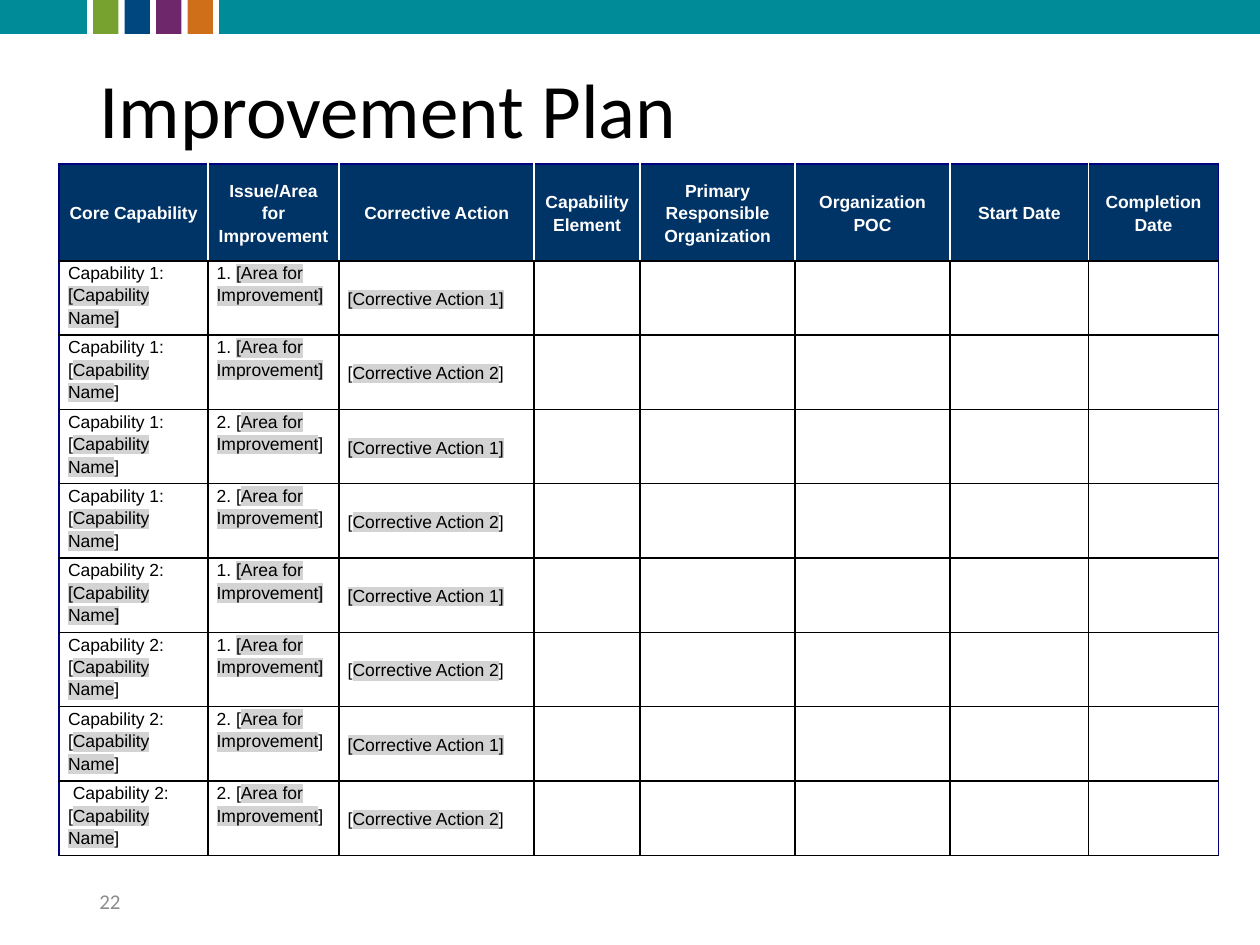
from lxml.etree import SubElement
from pptx import Presentation
from pptx.dml.color import RGBColor
from pptx.enum.shapes import MSO_SHAPE
from pptx.enum.text import MSO_ANCHOR, PP_ALIGN
from pptx.oxml.ns import qn
from pptx.util import Inches, Pt

TEAL = RGBColor(0x00, 0x8B, 0x99)
GREEN = RGBColor(0x78, 0xA2, 0x2F)
BLUE = RGBColor(0x00, 0x46, 0x7F)
PURPLE = RGBColor(0x6D, 0x27, 0x6A)
ORANGE = RGBColor(0xD0, 0x6F, 0x1A)
HEADER_BLUE = RGBColor(0x00, 0x33, 0x66)
FRAME_NAVY = RGBColor(0x00, 0x00, 0x80)
MARK_GRAY = RGBColor(0xD3, 0xD3, 0xD3)
NUMBER_GRAY = RGBColor(0x8C, 0x8C, 0x8C)
WHITE = RGBColor(0xFF, 0xFF, 0xFF)
BLACK = RGBColor(0x00, 0x00, 0x00)

SLIDE_WIDTH, SLIDE_HEIGHT = 10, 7.5
TEXT_LEFT = 0.69

# Top band: a teal start, four tabs at an even pitch, a teal rest
BAND_HEIGHT = 0.27
TAB_WIDTH, TAB_GAP = 0.2, 0.05
TAB_COLORS = (GREEN, BLUE, PURPLE, ORANGE)

# Table grid
TABLE_LEFT, TABLE_TOP = 0.47, 1.3
COLUMN_WIDTHS = (1.18, 1.04, 1.55, 0.84, 1.23, 1.23, 1.1, 1.03)
HEADER_HEIGHT, ROW_HEIGHT = 0.77, 0.59
BODY_ROWS = 8
HEADERS = (
    "Core Capability", "Issue/Area for Improvement", "Corrective Action",
    "Capability Element", "Primary Responsible Organization",
    "Organization POC", "Start Date", "Completion Date",
)


def add_span(para, text, size, font, color, bold=False, marked=False):
    """Add one run; a marked run gets a gray highlight."""
    span = para.add_run()
    span.text = text
    span.font.size = Pt(size)
    span.font.bold = bold
    span.font.color.rgb = color
    span.font.name = font
    if marked:
        properties = span.font._element
        highlight = SubElement(properties, qn("a:highlight"))
        SubElement(highlight, qn("a:srgbClr"), val=str(MARK_GRAY))
        properties.find(qn("a:solidFill")).addnext(highlight)


def add_block(page, left, width, color):
    block = page.shapes.add_shape(
        MSO_SHAPE.RECTANGLE, Inches(left), 0, Inches(width), Inches(BAND_HEIGHT))
    block.shadow.inherit = False
    block.fill.solid()
    block.fill.fore_color.rgb = color
    block.line.fill.background()


def add_band(page):
    add_block(page, 0, TEXT_LEFT, TEAL)
    left = TEXT_LEFT + TAB_GAP
    for color in TAB_COLORS:
        add_block(page, left, TAB_WIDTH, color)
        left += TAB_WIDTH + TAB_GAP
    add_block(page, left, SLIDE_WIDTH - left, TEAL)


def add_label(page, top, width, height, text, size, color, line_spacing=1.0):
    box = page.shapes.add_textbox(
        Inches(TEXT_LEFT), Inches(top), Inches(width), Inches(height))
    frame = box.text_frame
    frame.word_wrap = True
    frame.vertical_anchor = MSO_ANCHOR.MIDDLE
    para = frame.paragraphs[0]
    para.line_spacing = line_spacing
    add_span(para, text, size, "Calibri", color)


def set_borders(cell, left, right, top, bottom):
    properties = cell._tc.get_or_add_tcPr()
    sides = {"a:lnL": left, "a:lnR": right, "a:lnT": top, "a:lnB": bottom}
    for position, (tag, color) in enumerate(sides.items()):
        line = SubElement(properties, qn(tag), w=str(Pt(1)))
        fill = SubElement(line, qn("a:solidFill"))
        SubElement(fill, qn("a:srgbClr"), val=str(color))
        properties.insert(position, line)


def style_cell(cell, row, column):
    """Navy outer frame, white lines in the header, black lines in the body."""
    inner = BLACK if row else WHITE
    last = len(COLUMN_WIDTHS) - 1
    set_borders(
        cell,
        left=FRAME_NAVY if column == 0 else inner,
        right=FRAME_NAVY if column == last else inner,
        top=BLACK if row else FRAME_NAVY,
        bottom=BLACK)
    if row:
        cell.fill.background()
    else:
        cell.fill.solid()
        cell.fill.fore_color.rgb = HEADER_BLUE


def fill_cell(cell, spans, color=BLACK, bold=False, centered=False, middle=False):
    """Write (text, marked) pairs into a cell."""
    cell.margin_left = cell.margin_right = Inches(0.07)
    cell.margin_top = cell.margin_bottom = 0
    cell.vertical_anchor = MSO_ANCHOR.MIDDLE if middle else MSO_ANCHOR.TOP
    para = cell.text_frame.paragraphs[0]
    para.alignment = PP_ALIGN.CENTER if centered else PP_ALIGN.LEFT
    para.line_spacing = 1.15
    para.space_before = para.space_after = Pt(2)
    for text, marked in spans:
        add_span(para, text, 10, "Arial", color, bold, marked)


def field_spans(lead, name, brackets_marked):
    """A lead text and a bracketed field, with the brackets marked or plain."""
    if brackets_marked:
        spans = [(lead, False), (f"[{name}]", True)]
    else:
        spans = [(lead + "[", False), (name, True), ("]", False)]
    return [span for span in spans if span[0]]


def body_fields(index):
    """Two capabilities, two areas in each, two actions in each area."""
    capability, area, action = index // 4 + 1, index // 2 % 2 + 1, index % 2 + 1
    lead = f"Capability {capability}: "
    if index == BODY_ROWS - 1:
        lead = " " + lead
    return (
        field_spans(lead, "Capability Name", index % 4 == 0),
        field_spans(f"{area}. ", "Area for Improvement", area == 1),
        field_spans("", f"Corrective Action {action}", action == 1),
    )


def add_plan_table(page):
    table = page.shapes.add_table(
        BODY_ROWS + 1, len(COLUMN_WIDTHS), Inches(TABLE_LEFT), Inches(TABLE_TOP),
        Inches(sum(COLUMN_WIDTHS)),
        Inches(HEADER_HEIGHT + BODY_ROWS * ROW_HEIGHT)).table
    table.first_row = table.horz_banding = False
    for column, width in zip(table.columns, COLUMN_WIDTHS):
        column.width = Inches(width)
    for number, row in enumerate(table.rows):
        row.height = Inches(ROW_HEIGHT if number else HEADER_HEIGHT)
        for column, cell in enumerate(row.cells):
            style_cell(cell, number, column)

    # Header row
    for column, header in enumerate(HEADERS):
        fill_cell(table.cell(0, column), [(header, False)],
                  WHITE, bold=True, centered=True, middle=True)

    # Body rows: the first three columns hold fields
    for index in range(BODY_ROWS):
        for column, spans in enumerate(body_fields(index)):
            fill_cell(table.cell(index + 1, column), spans, middle=column == 2)


def main():
    deck = Presentation()
    deck.slide_width, deck.slide_height = Inches(SLIDE_WIDTH), Inches(SLIDE_HEIGHT)
    page = deck.slides.add_slide(deck.slide_layouts[6])
    add_band(page)
    add_label(page, 0.4, 8.62, 1, "Improvement Plan", 44, BLACK, line_spacing=0.9)
    add_plan_table(page)
    add_label(page, 6.95, 2.25, 0.4, "22", 12, NUMBER_GRAY)
    deck.save("out.pptx")


if __name__ == "__main__":
    main()
